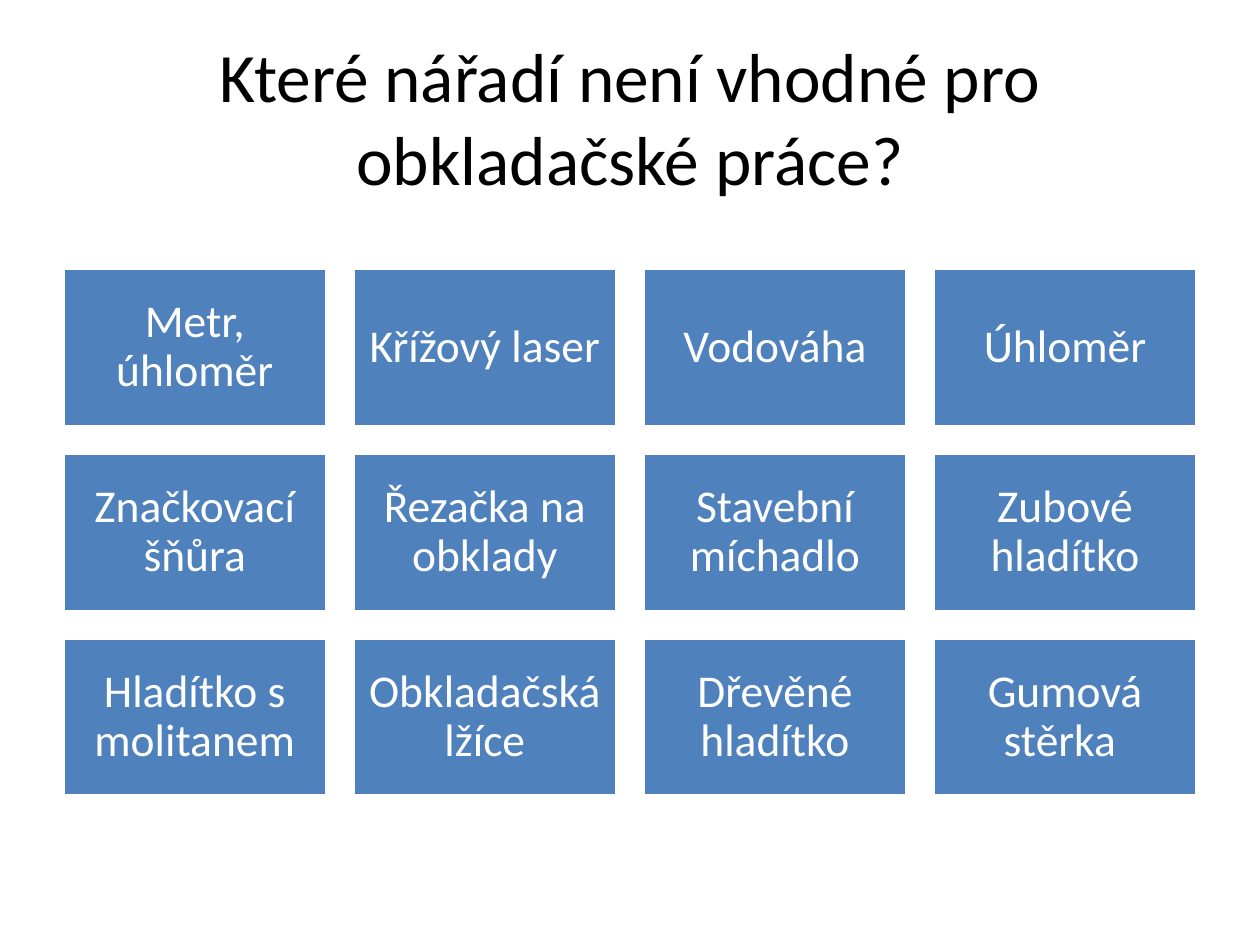
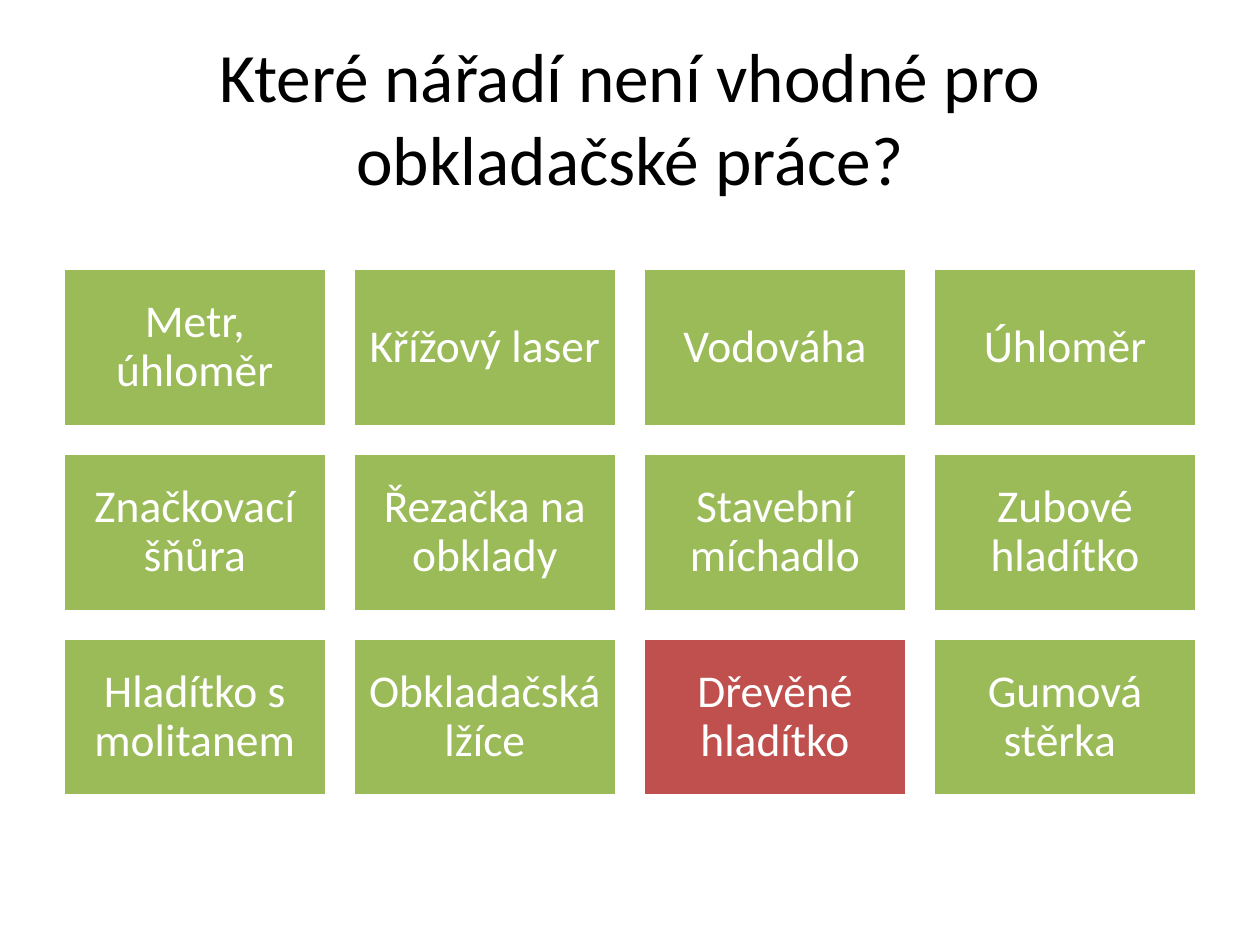
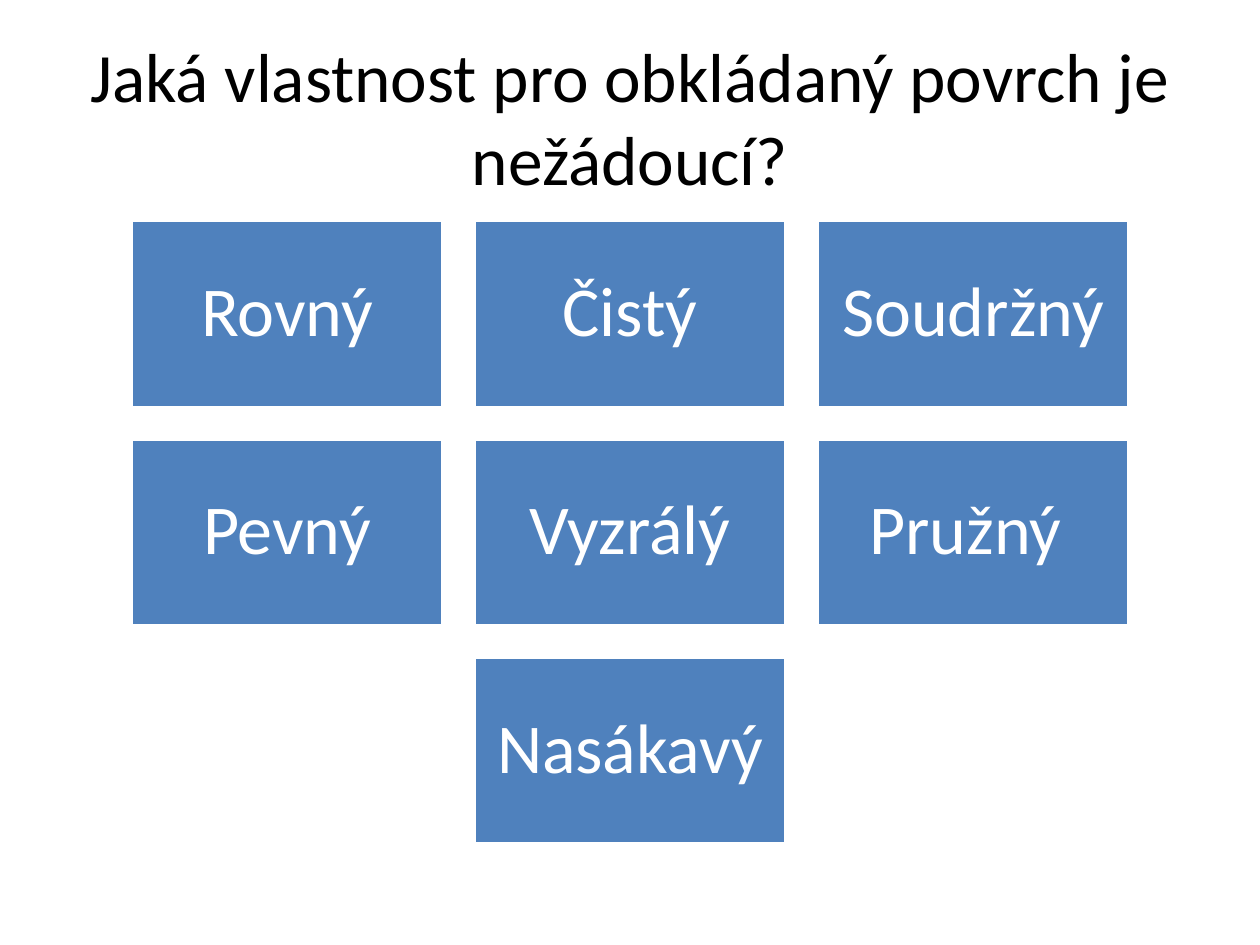
from dataclasses import dataclass
from typing import Optional

from pptx import Presentation
from pptx.dml.color import RGBColor
from pptx.enum.shapes import MSO_SHAPE
from pptx.enum.text import MSO_ANCHOR, MSO_AUTO_SIZE, PP_ALIGN
from pptx.util import Inches, Pt

COLORS = {
    "question": "4F81BD",
    "suitable": "9BBB59",
    "unsuitable": "C0504D",
    "light": "FFFFFF",
    "title": "000000",
}
FONT = "Calibri"
TITLE_ONLY = 5

SLIDE_W, SLIDE_H = 10, 7.5
MARGIN = 0.05 * SLIDE_W
CONTENT_W = SLIDE_W - 2 * MARGIN
TITLE_TOP, TITLE_H = 0.04 * SLIDE_H, SLIDE_H / 6
ANSWERS_TOP, ANSWERS_H = 1.75, 0.66 * SLIDE_H

# Shares of the tile width
TILE_RATIO = 0.6
GAP_RATIO = 0.1


@dataclass(frozen=True)
class Quiz:
    question: str
    answers: tuple[str, ...]
    columns: int
    label_pt: int
    tile_color: str = "question"
    wrong_answer: Optional[str] = None


TOOLS_QUESTION = "Které nářadí není vhodné pro obkladačské práce?"
TOOLS = (
    "Metr, úhloměr", "Křížový laser", "Vodováha", "Úhloměr",
    "Značkovací šňůra", "Řezačka na obklady", "Stavební míchadlo", "Zubové hladítko",
    "Hladítko s molitanem", "Obkladačská lžíce", "Dřevěné hladítko", "Gumová stěrka ",
)
SURFACE_PROPERTIES = (
    "Rovný", "Čistý", "Soudržný",
    "Pevný", "Vyzrálý", "Pružný ",
    "Nasákavý",
)
QUIZZES = (
    Quiz(TOOLS_QUESTION, TOOLS, 4, 26),
    Quiz(TOOLS_QUESTION, TOOLS, 4, 26, "suitable", "Dřevěné hladítko"),
    Quiz("Jaká vlastnost pro obkládaný povrch je nežádoucí?", SURFACE_PROPERTIES, 3, 40),
)


def rgb(name: str) -> RGBColor:
    return RGBColor.from_string(COLORS[name])


def format_text(frame, text: str, size: float, color: str) -> None:
    frame.text = text
    frame.word_wrap = True
    frame.auto_size = MSO_AUTO_SIZE.NONE
    frame.vertical_anchor = MSO_ANCHOR.MIDDLE
    paragraph = frame.paragraphs[0]
    paragraph.alignment = PP_ALIGN.CENTER
    paragraph.font.name = FONT
    paragraph.font.size = Pt(size)
    paragraph.font.color.rgb = rgb(color)


def add_title(slide, question: str) -> None:
    title = slide.shapes.title
    title.left, title.top = Inches(MARGIN), Inches(TITLE_TOP)
    title.width, title.height = Inches(CONTENT_W), Inches(TITLE_H)
    format_text(title.text_frame, question, 39.6, "title")


def add_tile(slide, answer: str, left: float, top: float, width: float,
             color: str, label_pt: int) -> None:
    tile = slide.shapes.add_shape(
        MSO_SHAPE.RECTANGLE, Inches(left), Inches(top),
        Inches(width), Inches(width * TILE_RATIO))
    tile.shadow.inherit = False
    tile.fill.solid()
    tile.fill.fore_color.rgb = rgb(color)
    tile.line.color.rgb = rgb("light")
    tile.line.width = Pt(2)

    frame = tile.text_frame
    format_text(frame, answer, label_pt, "light")
    frame.margin_left = frame.margin_right = Pt(0.3 * label_pt)
    frame.margin_top = frame.margin_bottom = Pt(0.3 * label_pt)
    frame.paragraphs[0].line_spacing = 0.9
    frame.paragraphs[0].space_after = Pt(0.35 * label_pt)


def span(count: int, size: float, gap: float) -> float:
    """Length of a run of equal items with gaps between them."""
    return count * size + (count - 1) * gap


def add_answers(slide, quiz: Quiz) -> None:
    """Fit the largest tiles into the answer area and centre every row."""
    rows = [quiz.answers[start:start + quiz.columns]
            for start in range(0, len(quiz.answers), quiz.columns)]
    width = min(CONTENT_W / span(quiz.columns, 1, GAP_RATIO),
                ANSWERS_H / span(len(rows), TILE_RATIO, GAP_RATIO))
    gap, height = width * GAP_RATIO, width * TILE_RATIO
    first_top = ANSWERS_TOP + (ANSWERS_H - span(len(rows), height, gap)) / 2

    for row, answers in enumerate(rows):
        first_left = (SLIDE_W - span(len(answers), width, gap)) / 2
        for column, answer in enumerate(answers):
            color = "unsuitable" if answer == quiz.wrong_answer else quiz.tile_color
            add_tile(slide, answer, first_left + column * (width + gap),
                     first_top + row * (height + gap), width, color, quiz.label_pt)


def main() -> None:
    deck = Presentation()
    deck.slide_width, deck.slide_height = Inches(SLIDE_W), Inches(SLIDE_H)
    for quiz in QUIZZES:
        slide = deck.slides.add_slide(deck.slide_layouts[TITLE_ONLY])
        add_title(slide, quiz.question)
        add_answers(slide, quiz)
    deck.save("out.pptx")


if __name__ == "__main__":
    main()
